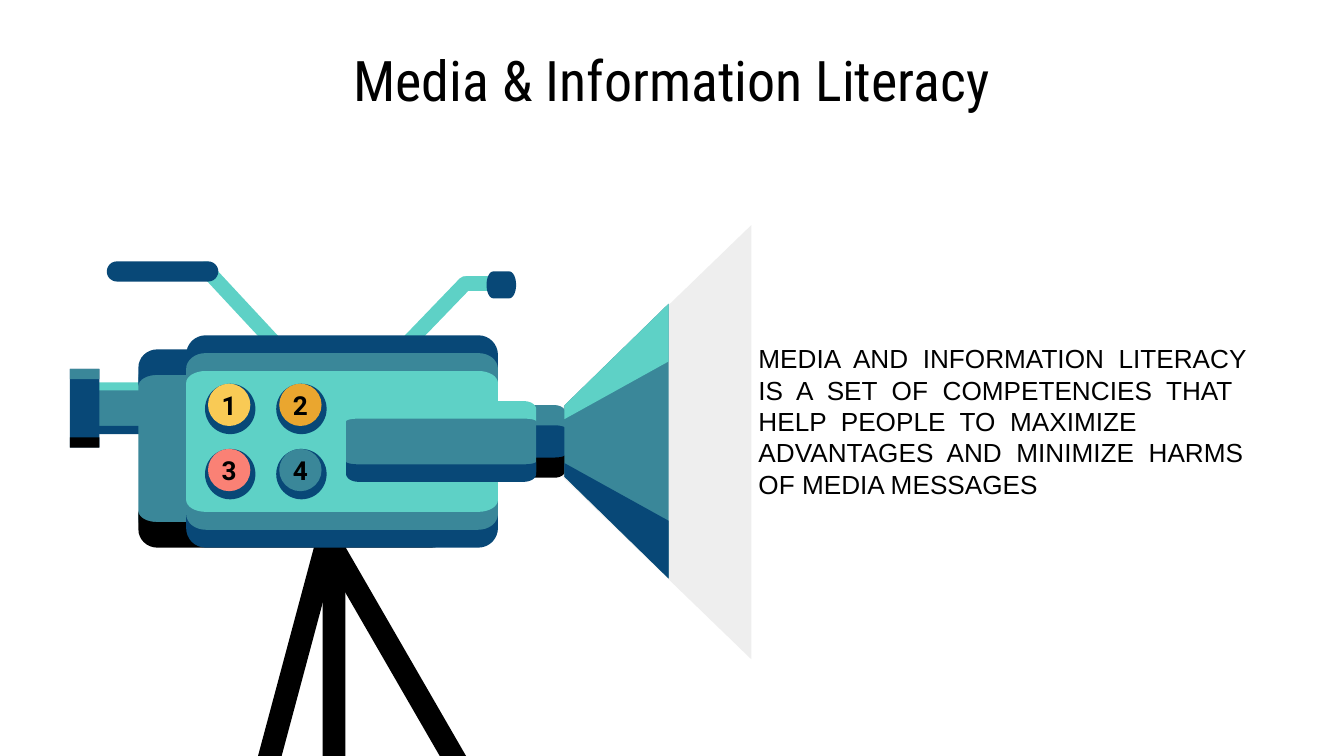
from math import atan2, cos, degrees, hypot, pi, sin

from pptx import Presentation
from pptx.dml.color import RGBColor
from pptx.enum.shapes import MSO_SHAPE as SHAPE
from pptx.enum.text import MSO_ANCHOR as ANCHOR, PP_ALIGN as ALIGN
from pptx.util import Inches, Pt

C = {"teal": "3A8799", "mint": "5ED1C6", "navy": "084877", "black": "000000",
     "beam": "EEEEEE", "yellow": "F9CA55", "amber": "EAA62F", "coral": "FA8175"}

# The 16:9 slide is a grid of square cells, 1000 columns wide
COLS, ROWS = 1000, 562.5
CELL = Inches(10) / COLS


def cells(*values):
    return [round(v * CELL) for v in values]


def paint(sp, color):
    sp.shadow.inherit = False
    sp.fill.solid()
    sp.fill.fore_color.rgb = RGBColor.from_string(C[color])
    sp.line.fill.background()
    return sp


def preset(s, kind, box, color):
    return paint(s.add_shape(kind, *cells(*box)), color)


def polygon(s, points, color):
    pts = [tuple(cells(*pt)) for pt in points]
    fb = s.build_freeform(*pts[0], scale=1.0)
    fb.add_line_segments(pts[1:], close=True)
    return paint(fb.convert_to_shape(), color)


def write(tf, text, font, size, align=None, bold=False):
    p = tf.paragraphs[0]
    p.alignment = align
    r = p.add_run()
    r.text = text
    r.font.name, r.font.size, r.font.bold = font, Pt(size), bold
    r.font.color.rgb = RGBColor.from_string(C["black"])


def text_box(s, box):
    tf = s.add_textbox(*cells(*box)).text_frame
    tf.word_wrap = True
    return tf


def arc(cx, cy, rx, ry, start, sweep=90, steps=8):
    angles = [(start + sweep * i / steps) * pi / 180 for i in range(steps + 1)]
    return [(cx + rx * cos(a), cy + ry * sin(a)) for a in angles]


def rounded(s, box, rx, ry, color):
    x, y, w, h = box
    left, right, top, bottom = x + rx, x + w - rx, y + ry, y + h - ry
    polygon(s, arc(left, top, rx, ry, 180) + arc(right, top, rx, ry, 270)
            + arc(right, bottom, rx, ry, 0) + arc(left, bottom, rx, ry, 90), color)


def banded(s, box, rx, ry, band, notch, colors):
    """Rounded block with a curved band along its top and its bottom."""
    x, y, w, h = box
    top, middle, bottom = colors
    if rx:
        # The middle stays just inside the bands, so its corners do not show
        rounded(s, (x, y + notch, w, h - 2 * notch), rx, ry, middle)
    else:
        preset(s, SHAPE.RECTANGLE, box, middle)
    left, right = x + rx, x + w - rx
    edge = (arc(left, y + ry, rx, ry, 180) + arc(right, y + ry, rx, ry, 270)
            + arc(right, y + band, rx, notch, 0, -90)
            + arc(left, y + band, rx, notch, 270, -90))
    polygon(s, [(px, 2 * y + h - py) for px, py in edge], bottom)
    polygon(s, edge, top)


def bar(s, cx, cy, length, thick, angle, color, kind=SHAPE.RECTANGLE):
    sp = preset(s, kind, (cx - length / 2, cy - thick / 2, length, thick), color)
    sp.rotation = angle
    return sp


def rod(s, start, end, thick, color):
    (x1, y1), (x2, y2) = start, end
    sp = bar(s, (x1 + x2) / 2, (y1 + y2) / 2, hypot(x2 - x1, y2 - y1) + thick,
             thick, degrees(atan2(y2 - y1, x2 - x1)), color, SHAPE.ROUNDED_RECTANGLE)
    sp.adjustments[0] = 0.5


def light_beam(s, box):
    x, y, w, h = box
    sp = preset(s, SHAPE.ISOSCELES_TRIANGLE,
                (x + (w - h) / 2, y + (h - w) / 2, h, w), "beam")
    sp.rotation = 270


def tripod(s, box):
    x, y, w, h = box
    for share, angle in ((0.4, 90), (1, 60), (0, 105)):
        bar(s, x + share * w, y + h / 2, h, 17, angle, "black")


def handles(s, box):
    x, y = box[:2]
    # Grip
    rod(s, (x + 74, y + 6), (x + 127, y + 63), 11, "mint")
    rod(s, (x + 8, y + 8), (x + 76, y + 8), 15, "navy")
    # Microphone
    rod(s, (x + 267, y + 17), (x + 214, y + 72), 11, "mint")
    rod(s, (x + 268, y + 17), (x + 286, y + 17), 11, "mint")
    rounded(s, (x + 283, y + 8, 22, 20), 5, 10, "navy")


def body(s, box):
    x, y, w, h = box
    # Eyepiece tube and back case
    banded(s, (x - 35, y + 35, 96, 38.5), 6, 4, 8, 2, ("mint", "teal", "navy"))
    banded(s, (x, y + 10.5, 232, h - 10.5), 14, 13.5, 27, 8,
           ("navy", "teal", "black"))
    # Nested front panels
    for i, color in enumerate(("navy", "teal", "mint")):
        inset = 13.3 * i
        rounded(s, (x + w - 232, y + inset, 232, h - 2 * inset),
                14.5, 14.5 - 2.8 * i, color)
    # Lens ring and barrel
    banded(s, (x + 195, y + 52, 122.5, 54), 8, 5, 17, 2, ("teal", "navy", "black"))
    banded(s, (x + 154.5, y + 49, 141.5, 60), 9, 6, 15, 2, ("mint", "teal", "navy"))


def lens_hood(s, box):
    x, y, w, h = box
    face = [(1, 0), (1, 1), (0, 0.63), (0, 0.37)]
    upper = [(1, 0), (1, 0.21), (0, 0.42), (0, 0.37)]
    lower = [(px, 1 - py) for px, py in upper]
    for outline, color in ((face, "teal"), (lower, "navy"), (upper, "mint")):
        polygon(s, [(x + px * w, y + py * h) for px, py in outline], color)


def buttons(s, box):
    x, y, w, h = box
    rim, cap = 37.5, 31.5
    for i, color in enumerate(("yellow", "amber", "coral", "teal")):
        row, col = divmod(i, 2)
        left, top = x + col * (w - rim), y + row * (h - rim)
        preset(s, SHAPE.OVAL, (left, top, rim, rim), "navy")
        sp = preset(s, SHAPE.OVAL, (left + 2.3, top, cap, cap), color)
        tf = sp.text_frame
        tf.margin_left = tf.margin_right = tf.margin_top = tf.margin_bottom = 0
        tf.vertical_anchor = ANCHOR.MIDDLE
        write(tf, str(i + 1), "Roboto", 14, ALIGN.CENTER, True)


def camera(s, box):
    x, y = box[:2]
    tripod(s, (x + 174.5, y + 130, 55, 285))
    handles(s, (x + 27, y, 305, 77))
    body(s, (x + 51, y + 55.5, 267.5, 158))
    lens_hood(s, (x + 368, y + 32, 77.5, 204.5))
    # Eyecup
    banded(s, (x, y + 80.5, 22, 58.5), 0, 0, 7.5, 0, ("teal", "navy", "black"))
    buttons(s, (x + 100.5, y + 91.5, 90.5, 86))


def title(s, box):
    tf = text_box(s, box)
    tf.vertical_anchor = ANCHOR.MIDDLE
    write(tf, "Media & Information Literacy", "Roboto Condensed", 30, ALIGN.CENTER)


def definition(s, box):
    write(text_box(s, box),
          "MEDIA  AND  INFORMATION  LITERACY  IS  A  SET  OF  COMPETENCIES  THAT  "
          "HELP  PEOPLE  TO  MAXIMIZE  ADVANTAGES  AND  MINIMIZE  HARMS "
          "OF MEDIA MESSAGES", "Arial", 14)


def main():
    prs = Presentation()
    prs.slide_width, prs.slide_height = cells(COLS, ROWS)
    s = prs.slides.add_slide(prs.slide_layouts[6]).shapes
    light_beam(s, (392, 167.5, 167, 323))
    title(s, (140, 32.5, 720, 53))
    camera(s.add_group_shape().shapes, (52, 194, 446, 368))
    definition(s, (554.5, 250, 398, 128))
    prs.save("out.pptx")


if __name__ == "__main__":
    main()
